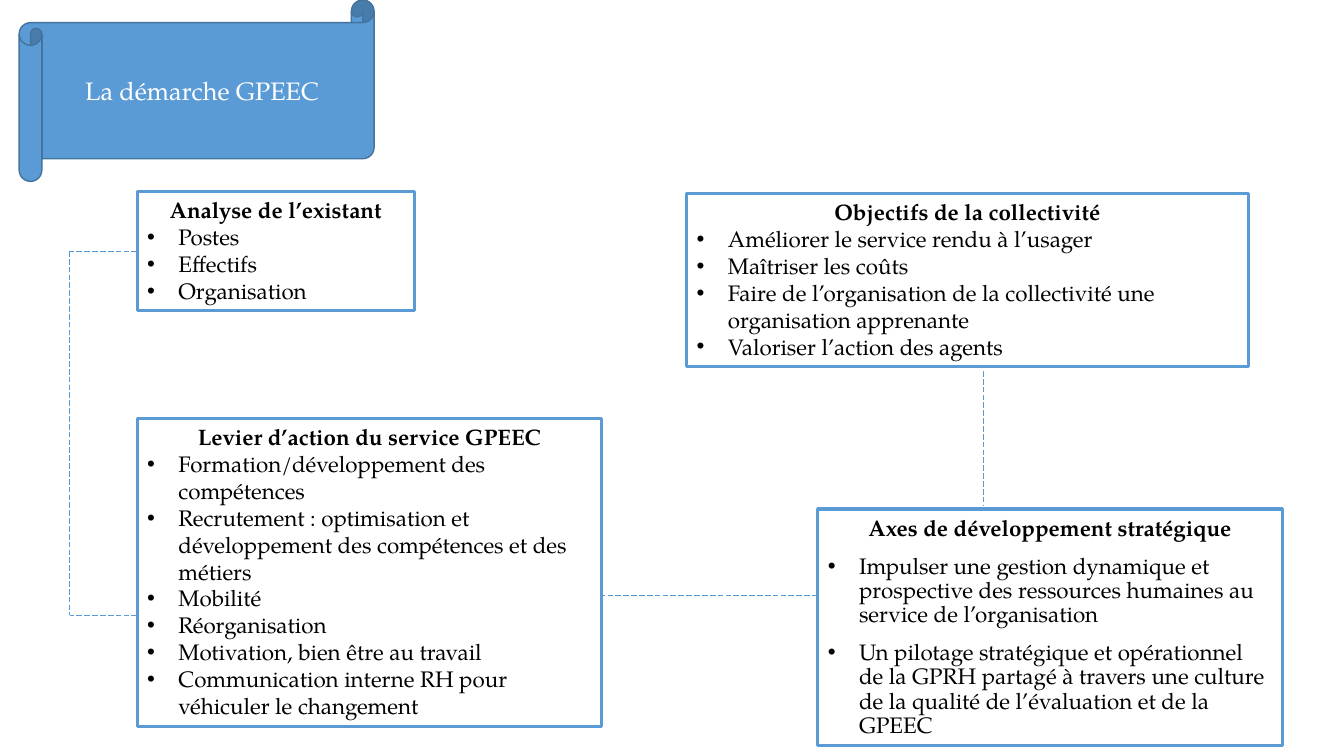
from lxml import etree
from pptx import Presentation
from pptx.dml.color import RGBColor
from pptx.enum import dml, shapes, text
from pptx.oxml import ns
from pptx.util import Inches, Pt

FONT = "TeX Gyre Pagella"
BLUE = RGBColor(0x5B, 0x9B, 0xD5)
DARK_BLUE = RGBColor(0x43, 0x73, 0x9E)
BLACK = RGBColor(0, 0, 0)
WHITE = RGBColor(255, 255, 255)

TITLE = "La démarche GPEEC"
SCROLL_AREA = (0.19, 0, 3.52, 1.8)
TITLE_AREA = (0.42, 0.23, 3.17, 1.34)
LOOSE = {"line": 0.9, "before": 10}
TIGHT = {"line": 1.0, "before": 0}
TOPICS = [
    ("Axes de développement stratégique", (8.11, 5.05, 4.61, 2.35), LOOSE, [
        "Impulser une gestion dynamique et prospective des ressources humaines "
        "au service de l’organisation",
        "Un pilotage stratégique et opérationnel de la GPRH partagé à travers "
        "une culture de la qualité de l’évaluation et de la GPEEC"]),
    ("Analyse de l’existant", (1.36, 1.9, 2.75, 1.18), TIGHT, [
        "Postes", "Effectifs", "Organisation"]),
    ("Objectifs de la collectivité", (6.81, 1.92, 5.57, 1.72), TIGHT, [
        "Améliorer le service rendu à l’usager",
        "Maîtriser les coûts",
        "Faire de l’organisation de la collectivité une organisation apprenante",
        "Valoriser l’action des agents"]),
    ("Levier d’action du service GPEEC", (1.36, 4.15, 4.61, 3.06), TIGHT, [
        "Formation/développement des compétences",
        "Recrutement : optimisation et développement des compétences et des métiers",
        "Mobilité",
        "Réorganisation",
        "Motivation, bien être au travail",
        "Communication interne RH pour véhiculer le changement"]),
]
LINKS = [
    ((1.36, 2.49), (0.69, 2.49), "Analyse de l’existant"),
    ((0.69, 2.49), (0.69, 6.1), None),
    ((1.36, 6.1), (0.69, 6.1), None),
    ((8.11, 5.91), (5.97, 5.91), None),
    ((9.75, 3.68), (9.75, 5.01), None),
]
LEFT_SIDE = 1


def place(part, area, anchor):
    """Move a text part to a fixed area in inches and anchor its text."""
    part.left, part.top, part.width, part.height = map(Inches, area)
    frame = part.text_frame
    frame.word_wrap = True
    frame.auto_size = text.MSO_AUTO_SIZE.NONE
    frame.vertical_anchor = anchor
    frame.margin_left = frame.margin_right = Inches(0.1)
    frame.margin_top = frame.margin_bottom = Inches(0.05)


def write(paragraph, words, size=16, color=BLACK, bold=False, bullet=False,
          line=1.0, before=0):
    """Fill a paragraph with formatted words, centred unless bulleted."""
    paragraph.alignment = text.PP_ALIGN.LEFT if bullet else text.PP_ALIGN.CENTER
    paragraph.line_spacing = line
    paragraph.space_before = Pt(before)
    paragraph.space_after = Pt(0)
    indent = Inches(0.31) if bullet else 0
    props = paragraph._p.get_or_add_pPr()
    props.set("marL", str(indent))
    props.set("indent", str(-indent))
    if bullet:
        etree.SubElement(props, ns.qn("a:buFont"), typeface="Arial")
        etree.SubElement(props, ns.qn("a:buChar"), char="•")
    else:
        etree.SubElement(props, ns.qn("a:buNone"))
    run = paragraph.add_run()
    run.text = words
    run.font.name, run.font.size, run.font.bold = FONT, Pt(size), bold
    run.font.color.rgb = color


def add_title(slide):
    """Put the title on its scroll."""
    title = slide.shapes.title
    scroll = slide.shapes.add_shape(
        shapes.MSO_SHAPE.HORIZONTAL_SCROLL, *map(Inches, SCROLL_AREA))
    scroll.shadow.inherit = False
    scroll.fill.solid()
    scroll.fill.fore_color.rgb = BLUE
    scroll.line.color.rgb = DARK_BLUE
    scroll.line.width = Pt(1)
    title.element.addprevious(scroll.element)
    place(title, TITLE_AREA, text.MSO_ANCHOR.MIDDLE)
    write(title.text_frame.paragraphs[0], TITLE, size=18, color=WHITE)


def fill_topic(box, heading, area, spacing, points):
    """Frame one topic and write its heading and list."""
    place(box, area, text.MSO_ANCHOR.TOP)
    box.line.color.rgb = BLUE
    box.line.width = Pt(2.25)
    write(box.text_frame.paragraphs[0], heading, bold=True)
    for point in points:
        write(box.text_frame.add_paragraph(), point, bullet=True, **spacing)


def add_link(slide, start, end, source=None):
    """Draw a dashed link, joined to its source box if there is one."""
    link = slide.shapes.add_connector(
        shapes.MSO_CONNECTOR.STRAIGHT, *map(Inches, start + end))
    if source is not None:
        link.begin_connect(source, LEFT_SIDE)
    link.line.color.rgb = BLUE
    link.line.width = Pt(0.5)
    link.line.dash_style = dml.MSO_LINE.LONG_DASH
    etree.SubElement(link.element.spPr, ns.qn("a:effectLst"))


def main():
    """Build the slide and save it."""
    deck = Presentation()
    deck.slide_width, deck.slide_height = Inches(13.33), Inches(7.5)
    comparison = deck.slide_layouts.get_by_name("Comparison")
    slide = deck.slides.add_slide(comparison)
    add_title(slide)
    boxes = {}
    for index, topic in enumerate(TOPICS, start=1):
        box = slide.placeholders[index]
        fill_topic(box, *topic)
        boxes[topic[0]] = box
    for start, end, source in LINKS:
        add_link(slide, start, end, boxes.get(source))
    deck.save("out.pptx")


if __name__ == "__main__":
    main()
